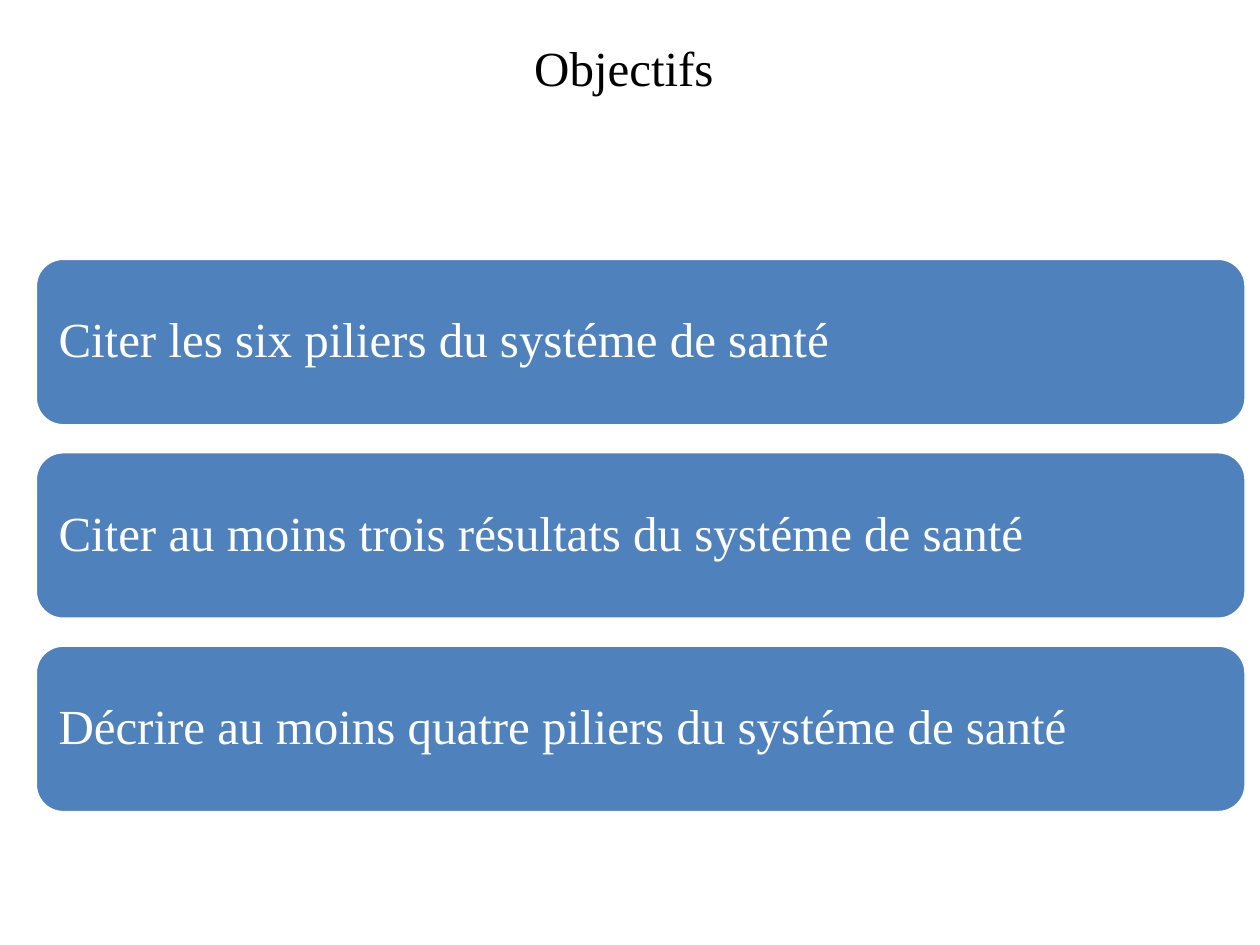
"""Build the objectives slide with three stacked goal cards."""
from dataclasses import dataclass

from pptx import Presentation
from pptx.dml.color import RGBColor
from pptx.enum.shapes import MSO_SHAPE
from pptx.enum.text import MSO_ANCHOR, PP_ALIGN
from pptx.util import Inches, Pt

ROUNDED = MSO_SHAPE.ROUNDED_RECTANGLE
MIDDLE = MSO_ANCHOR.MIDDLE
LEFT, CENTER = PP_ALIGN.LEFT, PP_ALIGN.CENTER


@dataclass(frozen=True)
class Theme:
    font: str = "Times New Roman"
    size: Pt = Pt(28)
    black: RGBColor = RGBColor(0x00, 0x00, 0x00)
    white: RGBColor = RGBColor(0xFF, 0xFF, 0xFF)
    blue: RGBColor = RGBColor(0x4F, 0x81, 0xBD)


THEME = Theme()
GOALS = [
    "Citer les six piliers du systéme de santé",
    "Citer au moins trois résultats du systéme de santé",
    "Décrire au moins quatre piliers du systéme de santé",
]
FIRST_TOP, PITCH = 2.05, 1.535


def write(frame, wording, color, align):
    frame.word_wrap = True
    frame.vertical_anchor = MIDDLE
    paragraph = frame.paragraphs[0]
    paragraph.alignment = align
    run = paragraph.add_run()
    run.text = wording
    run.font.name = THEME.font
    run.font.size = THEME.size
    run.font.color.rgb = color
    return paragraph


deck = Presentation()
deck.slide_width, deck.slide_height = Inches(10), Inches(7.5)
slide = deck.slides.add_slide(deck.slide_layouts[5])

heading = slide.shapes.title
heading.left, heading.top = Inches(0.5), Inches(0.3)
heading.width, heading.height = Inches(9), Inches(0.46)
write(heading.text_frame, "Objectifs ", THEME.black, CENTER)

for row, goal in enumerate(GOALS):
    card = slide.shapes.add_shape(
        ROUNDED, Inches(0.28), Inches(FIRST_TOP + row * PITCH), Inches(9.61), Inches(1.33)
    )
    card.shadow.inherit = False
    card.fill.solid()
    card.fill.fore_color.rgb = THEME.blue
    card.line.color.rgb = THEME.white
    card.line.width = Pt(2)
    frame = card.text_frame
    frame.margin_left = frame.margin_right = Inches(0.12)
    frame.margin_top = frame.margin_bottom = Inches(0.12)
    write(frame, goal, THEME.white, LEFT).line_spacing = 0.9

deck.save("out.pptx")
